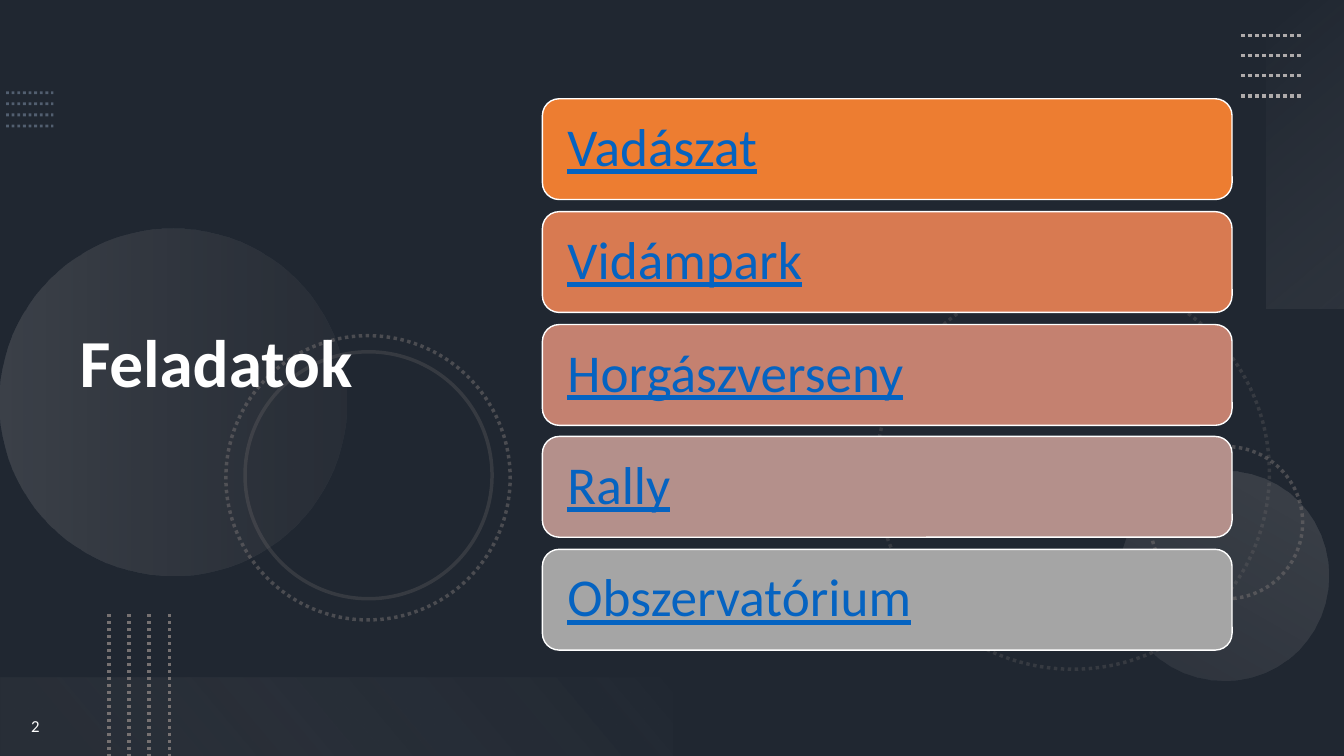
from dataclasses import dataclass

from lxml.etree import SubElement
from pptx import Presentation
from pptx.dml.color import RGBColor
from pptx.enum.dml import MSO_LINE
from pptx.enum.shapes import MSO_CONNECTOR, MSO_SHAPE
from pptx.enum.text import MSO_ANCHOR, PP_ALIGN
from pptx.oxml import parse_xml
from pptx.oxml.ns import nsdecls, qn
from pptx.shapes.autoshape import Shape
from pptx.shapes.base import BaseShape
from pptx.slide import Slide
from pptx.text.text import TextFrame
from pptx.util import Emu, Pt


@dataclass(frozen=True)
class Theme:
    font: str = "Calibri"
    title_size: int = 48
    task_size: int = 38
    number_size: int = 12
    background: str = "44546A"
    shade: str = "000000"
    white: str = "FFFFFF"
    link: str = "0563C1"
    blue_gray: str = "8497B0"
    gray: str = "AFABAB"
    dark_gray: str = "767171"
    pale: str = "F5F5F5"


THEME = Theme()


@dataclass(frozen=True)
class Box:
    left: int
    top: int
    width: int
    height: int


@dataclass(frozen=True)
class Stop:
    position: int
    color: str
    opacity: int


@dataclass(frozen=True)
class Glow:
    kind: MSO_SHAPE
    box: Box
    rotation: int
    angle: int
    stops: tuple[Stop, Stop]


@dataclass(frozen=True)
class Ring:
    left: int
    top: int
    diameter: int
    rotation: int
    opacity: int
    dotted: bool = True


@dataclass(frozen=True)
class DotLines:
    """Parallel dotted lines; (dx, dy) spans a line, (step_x, step_y) separates them."""
    left: int
    top: int
    dx: int
    dy: int
    step_x: int
    step_y: int
    color: str
    weight: float = 2.5
    opacity: int = 100


@dataclass(frozen=True)
class Task:
    name: str
    color: str


SLIDE = Box(0, 0, 1333, 750)
TITLE = Box(69, 54, 459, 617)
NUMBER = Box(0, 690, 70, 60)
FIRST_TASK = Box(538, 98, 684, 100)
TASK_SPAN = 447  # from the first task's top to the last one's
TASK_INSET = 20

RINGS = (
    Ring(869, 274, 390, 75, 25),
    Ring(1141, 443, 151, 270, 50),
    Ring(224, 333, 282, 75, 50),
    Ring(243, 349, 245, 75, 25, dotted=False),
)
DISCS = (
    Glow(MSO_SHAPE.OVAL, Box(0, 227, 344, 344), 270, 90,
         (Stop(0, THEME.gray, 20), Stop(100, THEME.dark_gray, 10))),
    Glow(MSO_SHAPE.OVAL, Box(1110, 467, 208, 208), 210, 90,
         (Stop(0, THEME.gray, 10), Stop(100, THEME.gray, 20))),
)
BANDS = (
    Glow(MSO_SHAPE.RECTANGLE, Box(1142, 114, 306, 78), 270, 140,
         (Stop(0, THEME.pale, 0), Stop(100, THEME.gray, 10))),
    Glow(MSO_SHAPE.RECTANGLE, Box(0, 672, 667, 78), 180, 140,
         (Stop(10, THEME.dark_gray, 10), Stop(100, THEME.pale, 0))),
)
DOT_LINES = (
    DotLines(6, 92, 47, 0, 0, 11, THEME.blue_gray, weight=2, opacity=50),
    DotLines(1231, 35, 60, 0, 0, 20, THEME.gray),
    DotLines(108, 609, 0, 141, 20, 0, THEME.dark_gray),
)
LINES_PER_GROUP = 4
TASKS = (
    Task("Vadászat", "ED7D31"),
    Task("Vidámpark", "D87A51"),
    Task("Horgászverseny", "C48170"),
    Task("Rally", "B4908B"),
    Task("Obszervatórium", "A5A5A5"),
)


def px(length: int) -> Emu:
    return Emu(length * 9144)


def rgb(color: str) -> RGBColor:
    return RGBColor.from_string(color)


def frame(box: Box) -> tuple[Emu, Emu, Emu, Emu]:
    return px(box.left), px(box.top), px(box.width), px(box.height)


def set_opacity(shape: BaseShape, percent: int) -> None:
    for color in shape.element.spPr.iter(qn("a:srgbClr")):
        SubElement(color, qn("a:alpha"), val=str(percent * 1000))


def add_plain(slide: Slide, kind: MSO_SHAPE, box: Box) -> Shape:
    shape = slide.shapes.add_shape(kind, *frame(box))
    shape.shadow.inherit = False
    shape.fill.background()
    shape.line.fill.background()
    return shape


def add_glow(slide: Slide, glow: Glow) -> None:
    shape = add_plain(slide, glow.kind, glow.box)
    shape.rotation = glow.rotation
    stops = "".join(
        f'<a:gs pos="{stop.position * 1000}"><a:srgbClr val="{stop.color}">'
        f'<a:alpha val="{stop.opacity * 1000}"/></a:srgbClr></a:gs>'
        for stop in glow.stops
    )
    gradient = parse_xml(
        f'<a:gradFill {nsdecls("a")} rotWithShape="1"><a:gsLst>{stops}</a:gsLst>'
        f'<a:lin ang="{glow.angle * 60000}" scaled="0"/></a:gradFill>'
    )
    properties = shape.element.spPr
    properties.replace(properties.find(qn("a:noFill")), gradient)


def add_ring(slide: Slide, ring: Ring) -> None:
    shape = add_plain(slide, MSO_SHAPE.OVAL,
                      Box(ring.left, ring.top, ring.diameter, ring.diameter))
    shape.rotation = ring.rotation
    shape.line.color.rgb = rgb(THEME.dark_gray)
    shape.line.width = Pt(2.5)
    if ring.dotted:
        shape.line.dash_style = MSO_LINE.ROUND_DOT
    set_opacity(shape, ring.opacity)


def add_dot_lines(slide: Slide, dots: DotLines) -> None:
    for index in range(LINES_PER_GROUP):
        x, y = dots.left + index * dots.step_x, dots.top + index * dots.step_y
        line = slide.shapes.add_connector(
            MSO_CONNECTOR.STRAIGHT, px(x), px(y), px(x + dots.dx), px(y + dots.dy))
        line.line.color.rgb = rgb(dots.color)
        line.line.width = Pt(dots.weight)
        line.line.dash_style = MSO_LINE.ROUND_DOT
        SubElement(line.element.spPr, qn("a:effectLst"))
        if dots.opacity < 100:
            set_opacity(line, dots.opacity)


def write(text_frame: TextFrame, text: str, size: int, color: str,
          align: PP_ALIGN = PP_ALIGN.LEFT, spacing: float = 0.9,
          bold: bool = False, underline: bool = False) -> None:
    text_frame.word_wrap = True
    text_frame.vertical_anchor = MSO_ANCHOR.MIDDLE
    paragraph = text_frame.paragraphs[0]
    paragraph.text = text
    paragraph.alignment = align
    paragraph.line_spacing = spacing
    font = paragraph.font
    font.name, font.size, font.color.rgb = THEME.font, Pt(size), rgb(color)
    font.bold, font.underline = bold, underline


def add_task(slide: Slide, task: Task, index: int) -> None:
    top = FIRST_TASK.top + round(index * TASK_SPAN / (len(TASKS) - 1))
    card = add_plain(slide, MSO_SHAPE.ROUNDED_RECTANGLE,
                     Box(FIRST_TASK.left, top, FIRST_TASK.width, FIRST_TASK.height))
    card.fill.solid()
    card.fill.fore_color.rgb = rgb(task.color)
    card.line.color.rgb = rgb(THEME.white)
    card.line.width = Pt(1)
    card.text_frame.margin_left = card.text_frame.margin_right = px(TASK_INSET)
    write(card.text_frame, task.name, THEME.task_size, THEME.link, underline=True)


def main() -> None:
    deck = Presentation()
    deck.slide_width, deck.slide_height = px(SLIDE.width), px(SLIDE.height)
    slide = deck.slides.add_slide(deck.slide_layouts[6])

    # Darkened background
    slide.background.fill.solid()
    slide.background.fill.fore_color.rgb = rgb(THEME.background)
    shade = add_plain(slide, MSO_SHAPE.RECTANGLE, SLIDE)
    shade.fill.solid()
    shade.fill.fore_color.rgb = rgb(THEME.shade)
    set_opacity(shade, 53)

    # Decoration
    for glow in DISCS + BANDS:
        add_glow(slide, glow)
    for ring in RINGS:
        add_ring(slide, ring)
    for dots in DOT_LINES:
        add_dot_lines(slide, dots)

    # Title and slide number
    title = slide.shapes.add_textbox(*frame(TITLE))
    write(title.text_frame, "Feladatok", THEME.title_size, THEME.white, bold=True)
    number = slide.shapes.add_textbox(*frame(NUMBER))
    write(number.text_frame, "2", THEME.number_size, THEME.white,
          align=PP_ALIGN.CENTER, spacing=1.0)

    # Task list
    for index, task in enumerate(TASKS):
        add_task(slide, task, index)

    deck.save("out.pptx")


if __name__ == "__main__":
    main()
